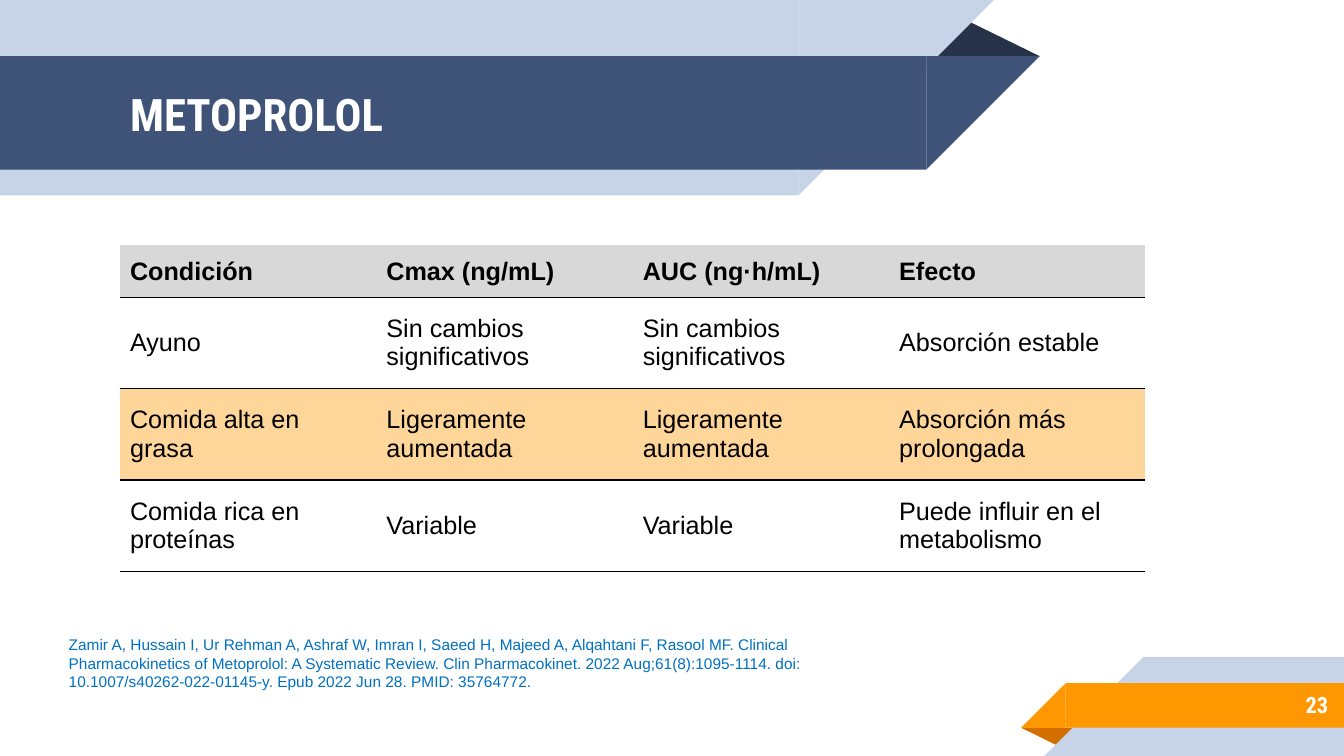
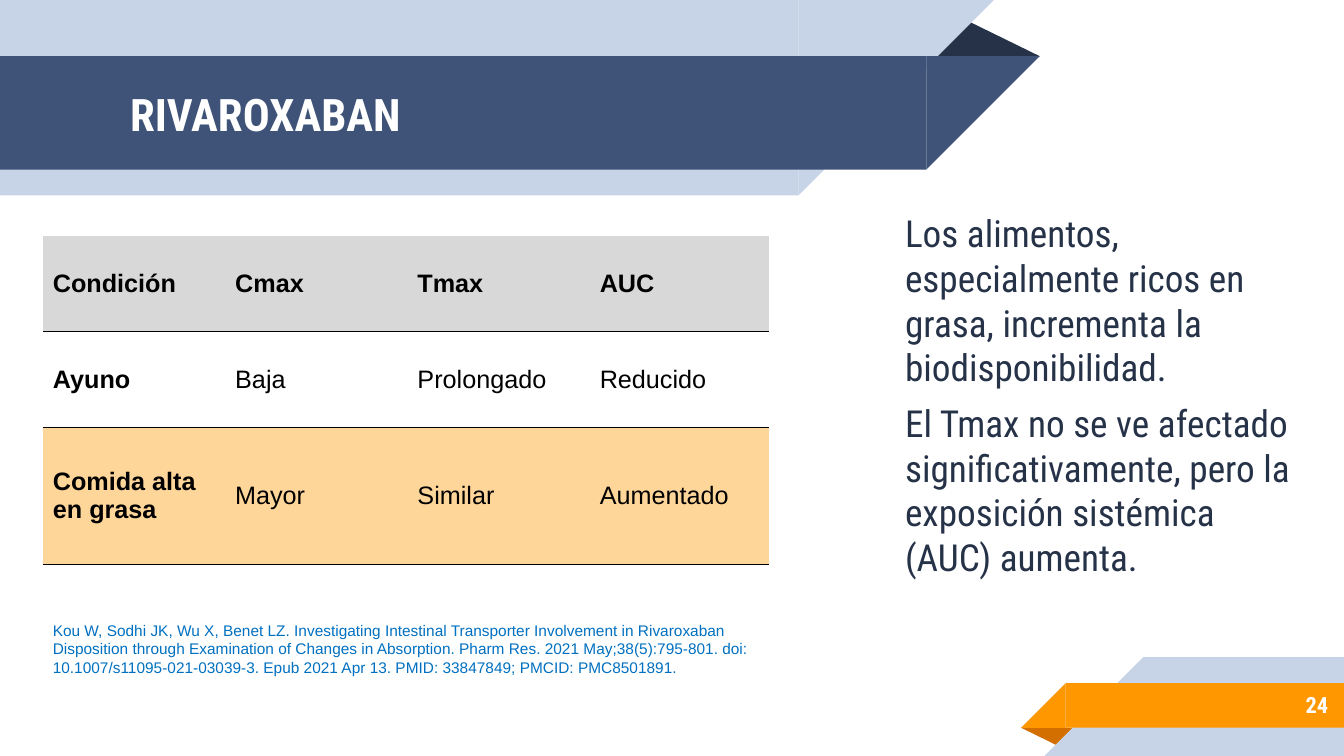
from lxml import etree
from pptx import Presentation
from pptx import util as u
from pptx.dml.color import RGBColor
from pptx.enum import shapes as s
from pptx.enum import text as t
from pptx.oxml import ns

UNIT = u.Inches(1) // 12
COLS, ROWS = 160, 90

WHITE = RGBColor(0xFF, 0xFF, 0xFF)
BLACK = RGBColor(0x00, 0x00, 0x00)
NAVY = RGBColor(0x3F, 0x53, 0x78)
INK = RGBColor(0x26, 0x32, 0x48)
PALE = RGBColor(0xC7, 0xD3, 0xE6)
AMBER = RGBColor(0xFF, 0x98, 0x00)
RUST = RGBColor(0xD2, 0x6F, 0x00)
PEACH = RGBColor(0xFF, 0xD6, 0x99)
GRAY = RGBColor(0xD8, 0xD8, 0xD8)
BLUE = RGBColor(0x00, 0x70, 0xC0)

HEAD = "Roboto Condensed"
BODY = "Arial"
PLAIN = "{2D5ABB26-0587-4C30-8999-92F81FD0307C}"
RECT = s.MSO_SHAPE.RECTANGLE
SLANT = s.MSO_SHAPE.RIGHT_TRIANGLE
FOLD = s.MSO_SHAPE.ISOSCELES_TRIANGLE


def grid(*spans):
    return [u.Emu(round(span * UNIT)) for span in spans]


class Deck:
    def __init__(self):
        self.prs = Presentation()
        self.prs.slide_width, self.prs.slide_height = grid(COLS, ROWS)
        self.slide = None

    def page(self, title, number):
        self.slide = self.prs.slides.add_slide(self.prs.slide_layouts[6])
        self.fold((110.16, 2.16, 13.68, 4.56), INK)
        self.top(95.04, 0, 23.28, PALE)
        self.top(110.28, 6.7, 13.5, NAVY)
        self.fold((121.56, 86.64, 6.84, 2.28), RUST, 180)
        self.foot(136.1, 78.24, 11.76, PALE)
        self.foot(126.88, 81.34, 5.3, AMBER)
        self.text((14.3, 6.8, 92, 13.4), [title], 32, WHITE,
                  bold=True, anchor=t.MSO_ANCHOR.MIDDLE)
        self.text((133.3, 81.1, 26, 5.5), [str(number)], 16, WHITE,
                  bold=True, anchor=t.MSO_ANCHOR.MIDDLE, align=t.PP_ALIGN.RIGHT)

    def shape(self, kind, box, color, turn=0):
        shape = self.slide.shapes.add_shape(kind, *grid(*box))
        shape.shadow.inherit = False
        shape.fill.solid()
        shape.fill.fore_color.rgb = color
        shape.line.fill.background()
        shape.rotation = turn
        return shape

    def fold(self, box, color, turn=0):
        self.shape(FOLD, box, color, turn).adjustments[0] = 0.32

    def top(self, width, top, height, color):
        self.shape(RECT, (0, top, width, height), color)
        self.shape(SLANT, (width, top, height, height), color, 90)

    def foot(self, left, top, height, color):
        self.shape(RECT, (left, top, COLS - left, height), color)
        self.shape(SLANT, (left - height, top, height, height), color, 270)

    def style(self, para, size, color, font, bold):
        para.font.size = u.Pt(size)
        para.font.color.rgb = color
        para.font.name = font
        para.font.bold = bold

    def text(self, box, lines, size, color, font=HEAD, bold=False, pad=1.2,
             left=1.2, gap=0, anchor=t.MSO_ANCHOR.TOP, align=t.PP_ALIGN.LEFT):
        frame = self.slide.shapes.add_textbox(*grid(*box)).text_frame
        frame.word_wrap = True
        frame.vertical_anchor = anchor
        frame.margin_left, frame.margin_right = grid(left, 1.2)
        frame.margin_top, frame.margin_bottom = grid(pad, pad)
        frame.text = "\n".join(lines)
        for para in frame.paragraphs:
            para.alignment = align
            para.space_before = u.Pt(gap)
            self.style(para, size, color, font, bold)

    def cite(self, box, line):
        self.text(box, [line], 11, BLUE, font=BODY, pad=0.6)

    def table(self, left, top, widths, heights, data, mark, stub=False):
        frame = self.slide.shapes.add_table(
            len(heights), len(widths),
            *grid(left, top, sum(widths), sum(heights)))
        table = frame.table
        table.horz_banding = False
        table._tbl.tblPr.find(ns.qn("a:tableStyleId")).text = PLAIN
        for col, width in zip(table.columns, grid(*widths)):
            col.width = width
        for row, height in zip(table.rows, grid(*heights)):
            row.height = height
        for r, line in enumerate(data):
            fill = {0: GRAY, mark: PEACH}.get(r)
            for c, word in enumerate(line):
                self.cell(table.cell(r, c), word, fill, r == 0 or stub and c == 0)

    def cell(self, cell, word, fill, bold):
        cell.text = word
        cell.vertical_anchor = t.MSO_ANCHOR.MIDDLE
        self.style(cell.text_frame.paragraphs[0], 18, BLACK, BODY, bold)
        if fill is None:
            cell.fill.background()
        else:
            cell.fill.solid()
            cell.fill.fore_color.rgb = fill
        rule = etree.Element(ns.qn("a:lnB"), w=str(u.Pt(1)))
        solid = etree.SubElement(rule, ns.qn("a:solidFill"))
        etree.SubElement(solid, ns.qn("a:srgbClr"), val=str(BLACK))
        cell._tc.get_or_add_tcPr().insert(0, rule)


def main():
    deck = Deck()

    deck.page("METOPROLOL", 23)
    deck.table(14.28, 29.2, [30.52] * 4, [6.2] + [10.87] * 3, [
        ["Condición", "Cmax (ng/mL)", "AUC (ng·h/mL)", "Efecto"],
        ["Ayuno", "Sin cambios significativos", "Sin cambios significativos",
         "Absorción estable"],
        ["Comida alta en grasa", "Ligeramente aumentada",
         "Ligeramente aumentada", "Absorción más prolongada"],
        ["Comida rica en proteínas", "Variable", "Variable",
         "Puede influir en el metabolismo"],
    ], mark=2)
    deck.cite((7, 75.05, 90.2, 7.9),
              "Zamir A, Hussain I, Ur Rehman A, Ashraf W, Imran I, Saeed H, "
              "Majeed A, Alqahtani F, Rasool MF. Clinical Pharmacokinetics of "
              "Metoprolol: A Systematic Review. Clin Pharmacokinet. 2022 "
              "Aug;61(8):1095-1114. doi: 10.1007/s40262-022-01145-y. "
              "Epub 2022 Jun 28. PMID: 35764772.")

    deck.page("RIVAROXABAN", 24)
    deck.text((104.75, 23.85, 50.4, 50.8), [
        "Los alimentos, especialmente ricos en grasa, incrementa la "
        "biodisponibilidad.",
        "El Tmax no se ve afectado significativamente, pero la exposición "
        "sistémica (AUC) aumenta.",
    ], 26.6, INK, left=3, gap=8)
    deck.table(5.1, 28.1, [21.7] * 3 + [21.4], [11.4, 11.4, 16.3], [
        ["Condición", "Cmax", "Tmax", "AUC"],
        ["Ayuno", "Baja", "Prolongado", "Reducido"],
        ["Comida alta en grasa", "Mayor", "Similar", "Aumentado"],
    ], mark=2, stub=True)
    deck.cite((5.1, 73.3, 87.2, 7.9),
              "Kou W, Sodhi JK, Wu X, Benet LZ. Investigating Intestinal "
              "Transporter Involvement in Rivaroxaban Disposition through "
              "Examination of Changes in Absorption. Pharm Res. 2021 "
              "May;38(5):795-801. doi: 10.1007/s11095-021-03039-3. "
              "Epub 2021 Apr 13. PMID: 33847849; PMCID: PMC8501891.")

    deck.prs.save("out.pptx")


if __name__ == "__main__":
    main()
